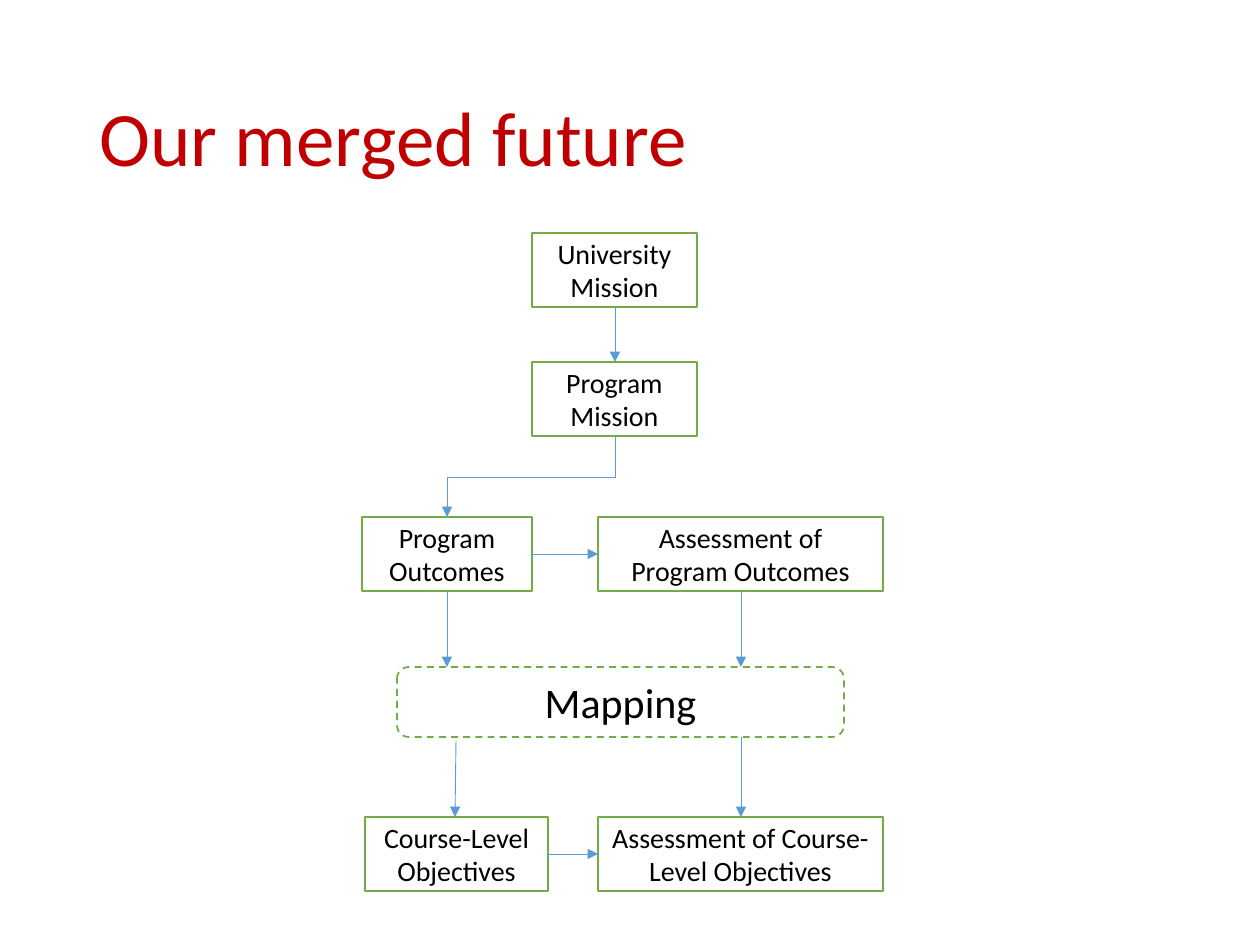
from lxml import etree
from pptx import Presentation
from pptx.dml.color import RGBColor
from pptx.enum.dml import MSO_LINE
from pptx.enum.shapes import MSO_CONNECTOR, MSO_SHAPE
from pptx.enum.text import MSO_ANCHOR, PP_ALIGN
from pptx.oxml.ns import qn
from pptx.util import Emu, Pt

PROCESS = MSO_SHAPE.FLOWCHART_PROCESS
ALTERNATE = MSO_SHAPE.FLOWCHART_ALTERNATE_PROCESS
STRAIGHT = MSO_CONNECTOR.STRAIGHT
ELBOW = MSO_CONNECTOR.ELBOW
DASH = MSO_LINE.DASH
MIDDLE = MSO_ANCHOR.MIDDLE
LEFT = PP_ALIGN.LEFT
CENTER = PP_ALIGN.CENTER
WHITE = RGBColor(0xFF, 0xFF, 0xFF)
BLACK = RGBColor(0x00, 0x00, 0x00)
RED = RGBColor(0xC0, 0x00, 0x00)
GREEN = RGBColor(0x70, 0xAD, 0x47)
BLUE = RGBColor(0x5B, 0x9B, 0xD5)
SCALE = 914400 / 126
BOX_HEIGHT = 74


def px(*lengths):
    return [Emu(round(length * SCALE)) for length in lengths]


def write_text(shape, lines, size, color, alignment, line_spacing):
    frame = shape.text_frame
    frame.text = lines
    for name, value in {"word_wrap": True, "vertical_anchor": MIDDLE}.items():
        setattr(frame, name, value)
    for paragraph in frame.paragraphs:
        paragraph.alignment = alignment
        paragraph.line_spacing = line_spacing
        font = paragraph.runs[0].font
        for name, value in {"name": "Calibri", "size": Pt(size)}.items():
            setattr(font, name, value)
        font.color.rgb = color


presentation = Presentation()
presentation.slide_width, presentation.slide_height = px(1260, 945)
slide = presentation.slides.add_slide(presentation.slide_layouts[6])

title = slide.shapes.add_textbox(*px(87, 50, 1086, 183))
write_text(title, "Our merged future", 44, RED, LEFT, 0.9)

boxes = [
    (PROCESS, "University Mission", 16, 532, 233, 165, BOX_HEIGHT),
    (PROCESS, "Program Mission", 16, 532, 362, 165, BOX_HEIGHT),
    (PROCESS, "Program\nOutcomes", 16, 362, 517, 170, BOX_HEIGHT),
    (PROCESS, "Assessment of Program Outcomes", 16, 598, 517, 285, BOX_HEIGHT),
    (PROCESS, "Course-Level Objectives", 16, 365, 817, 183, BOX_HEIGHT),
    (PROCESS, "Assessment of Course-Level Objectives", 16, 598, 817, 285, BOX_HEIGHT),
    (ALTERNATE, "Mapping", 24, 397, 667, 447, 70),
]
for kind, label, size, *bounds in boxes:
    box = slide.shapes.add_shape(kind, *px(*bounds))
    box.shadow.inherit = False
    box.fill.solid()
    box.fill.fore_color.rgb = WHITE
    box.line.color.rgb = GREEN
    box.line.width = Pt(1)
    if kind == ALTERNATE:
        box.line.dash_style = DASH
    write_text(box, label, size, BLACK, CENTER, 1.0)

arrows = [
    (STRAIGHT, 615, 307, 615, 362),
    (ELBOW, 491, 393, 571, 561),
    (STRAIGHT, 532, 554, 598, 554),
    (STRAIGHT, 548, 854, 598, 854),
    (STRAIGHT, 447, 591, 447, 667),
    (STRAIGHT, 741, 591, 741, 667),
    (STRAIGHT, 456, 741, 455, 817),
    (STRAIGHT, 741, 737, 741, 817),
]
for kind, *ends in arrows:
    arrow = slide.shapes.add_connector(kind, *px(*ends))
    arrow.line.color.rgb = BLUE
    arrow.line.width = Pt(0.5)
    properties = arrow.element.spPr
    etree.SubElement(properties.find(qn("a:ln")), qn("a:tailEnd"), type="triangle")
    etree.SubElement(properties, qn("a:effectLst"))
    if kind == ELBOW:
        properties.find(qn("a:xfrm")).set("rot", "5400000")

presentation.save("out.pptx")
